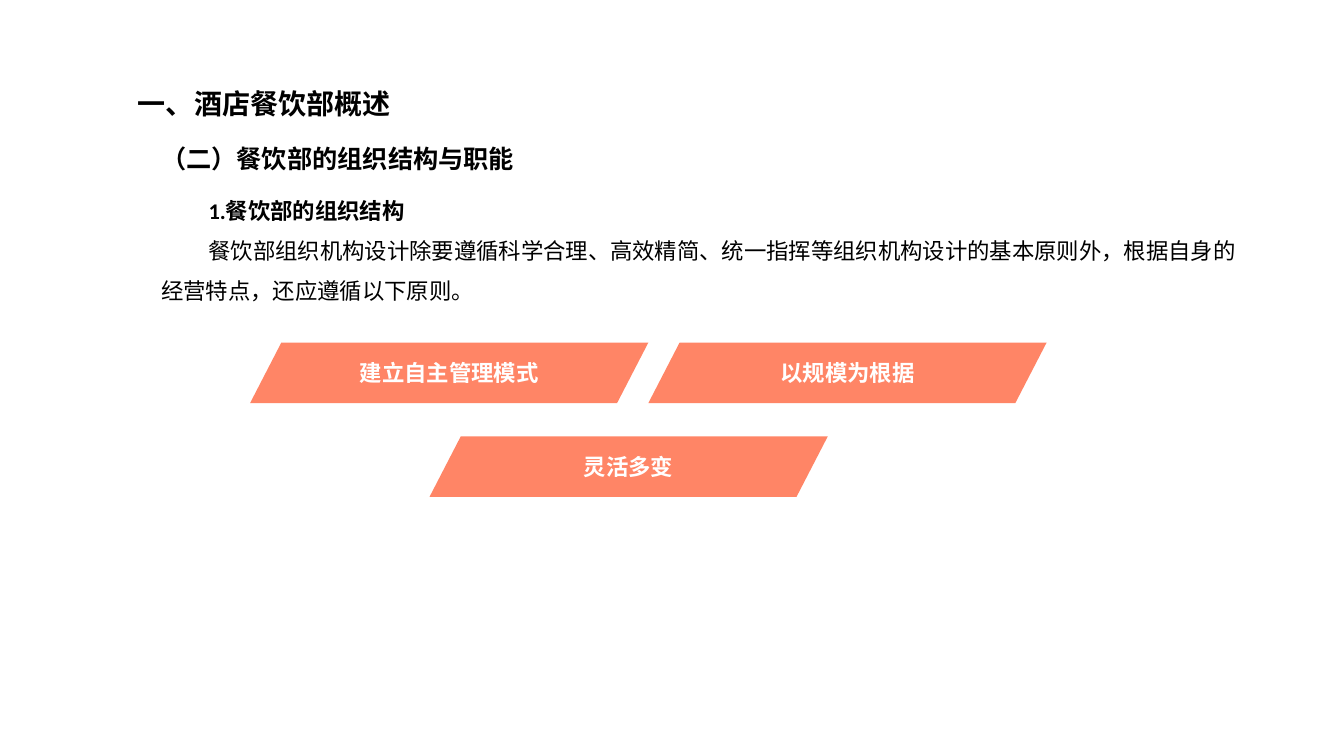
from lxml.etree import SubElement
from pptx import Presentation
from pptx.dml.color import RGBColor
from pptx.enum.text import MSO_ANCHOR, MSO_AUTO_SIZE, PP_ALIGN
from pptx.oxml.ns import qn
from pptx.util import Inches, Pt

BLACK = RGBColor(0x00, 0x00, 0x00)
WHITE = RGBColor(0xFF, 0xFF, 0xFF)
CORAL = RGBColor(0xFF, 0x85, 0x66)

HEADING = "一、酒店餐饮部概述"
SUBHEADING = "（二）餐饮部的组织结构与职能"
TOPIC = "1.餐饮部的组织结构"
EXPLANATION = (
    "餐饮部组织机构设计除要遵循科学合理、高效精简、统一指挥等组织机构设计的基本原则外，"
    "根据自身的经营特点，还应遵循以下原则。"
)

# Left and top of each principle's banner
PRINCIPLES = [
    ("建立自主管理模式", 2.48, 3.4),
    ("以规模为根据", 6.43, 3.4),
    ("灵活多变", 4.26, 4.33),
]


class SlideBuilder:
    chinese_font = "Noto Sans CJK SC"
    latin_font = "Calibri"
    banner_width, banner_height, banner_slant = 3.95, 0.6, 0.31

    def __init__(self, slide):
        self.slide = slide

    def add_text(self, paragraph, text, size, color=BLACK, bold=True, font=None):
        run = paragraph.add_run()
        run.text = text
        values = {"name": font or self.chinese_font, "size": Pt(size), "bold": bold}
        for name, value in values.items():
            setattr(run.font, name, value)
        run.font.color.rgb = color
        # East Asian characters take their own typeface
        east_asian = SubElement(run._r.get_or_add_rPr(), qn("a:ea"))
        east_asian.set("typeface", self.chinese_font)

    def text_box(self, left, top, width, height):
        box = self.slide.shapes.add_textbox(
            Inches(left), Inches(top), Inches(width), Inches(height))
        frame = box.text_frame
        frame.word_wrap = True
        frame.auto_size = MSO_AUTO_SIZE.SHAPE_TO_FIT_TEXT
        return frame

    def title(self, text, size, *bounds):
        self.add_text(self.text_box(*bounds).paragraphs[0], text, size)

    def body(self, lines, *bounds):
        frame = self.text_box(*bounds)
        for index, (text, bold) in enumerate(lines):
            paragraph = frame.add_paragraph() if index else frame.paragraphs[0]
            paragraph.line_spacing = 1.5
            paragraph._p.get_or_add_pPr().set("indent", str(Inches(0.47)))
            self.add_text(paragraph, text, 16, bold=bold, font=self.latin_font)

    def banner(self, text, left, top):
        right, bottom = left + self.banner_width, top + self.banner_height
        corners = [
            (left + self.banner_slant, top),
            (right, top),
            (right - self.banner_slant, bottom),
            (left, bottom),
        ]
        points = [(Inches(x), Inches(y)) for x, y in corners]
        outline = self.slide.shapes.build_freeform(*points[0])
        outline.add_line_segments(points[1:], close=True)
        shape = outline.convert_to_shape()
        shape.shadow.inherit = False
        shape.fill.solid()
        shape.fill.fore_color.rgb = CORAL
        shape.line.fill.background()
        frame_values = {
            "word_wrap": True,
            "vertical_anchor": MSO_ANCHOR.MIDDLE,
            "margin_left": Inches(0.16),
            "margin_right": Inches(0.16),
            "margin_top": 0,
            "margin_bottom": 0,
        }
        for name, value in frame_values.items():
            setattr(shape.text_frame, name, value)
        paragraph = shape.text_frame.paragraphs[0]
        paragraph.alignment = PP_ALIGN.CENTER
        self.add_text(paragraph, text, 16, WHITE)


def main():
    presentation = Presentation()
    presentation.slide_width = Inches(13.33)
    presentation.slide_height = Inches(7.5)
    builder = SlideBuilder(presentation.slides.add_slide(presentation.slide_layouts[6]))

    # Headings
    builder.title(HEADING, 20, 1.27, 0.81, 5.83, 0.43)
    builder.title(SUBHEADING, 18, 1.5, 1.37, 4.95, 0.4)

    # Explanation
    builder.body([(TOPIC, True), (EXPLANATION, False)], 1.5, 1.77, 11.05, 1.72)

    # Principles
    for text, left, top in PRINCIPLES:
        builder.banner(text, left, top)

    presentation.save("out.pptx")


if __name__ == "__main__":
    main()
